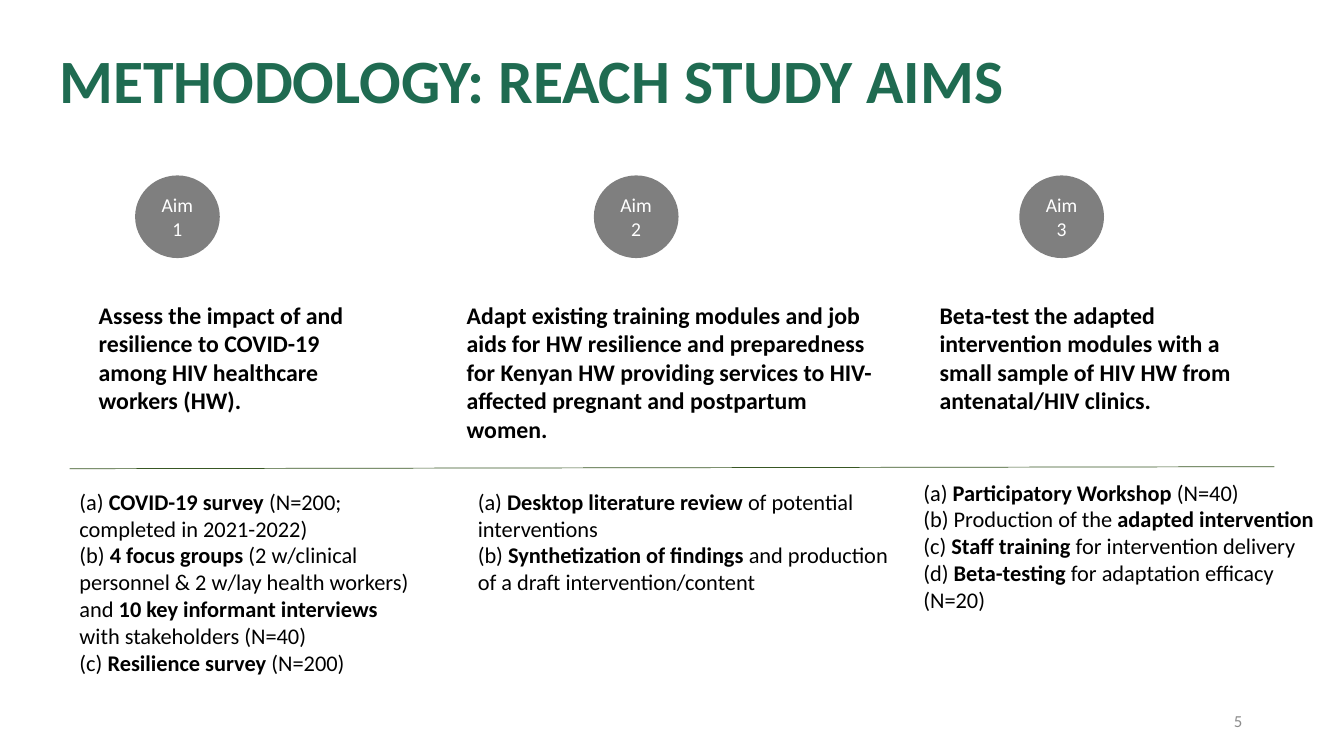
from dataclasses import dataclass

from lxml import etree
from pptx import Presentation
from pptx.dml.color import RGBColor
from pptx.enum.shapes import MSO_CONNECTOR, MSO_SHAPE
from pptx.enum.text import MSO_ANCHOR, PP_ALIGN
from pptx.oxml.ns import qn
from pptx.util import Inches, Pt

OVAL = MSO_SHAPE.OVAL
STRAIGHT = MSO_CONNECTOR.STRAIGHT
TOP, MIDDLE = MSO_ANCHOR.TOP, MSO_ANCHOR.MIDDLE
LEFT, CENTER, RIGHT = PP_ALIGN.LEFT, PP_ALIGN.CENTER, PP_ALIGN.RIGHT


@dataclass(frozen=True)
class Theme:
    font: str = "Calibri"
    green: str = "1F6B51"
    rule: str = "385723"
    ink: str = "000000"
    paper: str = "FFFFFF"
    grey: str = "8C8C8C"
    title: int = 44
    goal: int = 17
    body: int = 16
    badge: int = 14
    page: int = 12


THEME = Theme()

AIMS = [
    {
        "badge": 1.34,
        "goal": (0.88, 2.93, 2.89, 1.25),
        "text": "Assess the impact of and resilience to COVID-19 among HIV "
                "healthcare workers (HW).",
        "steps": (0.69, 4.79, 3.53, 2.26),
        "items": [
            ("(a) ", "COVID-19 survey ", "(N=200; completed in 2021-2022)"),
            ("(b) ", "4 focus groups ",
             "(2 w/clinical personnel & 2 w/lay health workers) and ",
             "10 key informant interviews ", "with stakeholders (N=40)"),
            ("(c) ", "Resilience survey ", "(N=200)"),
        ],
    },
    {
        "badge": 5.89,
        "goal": (4.53, 2.93, 4.28, 1.53),
        "text": "Adapt existing training modules and job aids for HW resilience "
                "and preparedness for Kenyan HW providing services to "
                "HIV-affected pregnant and postpartum women.",
        "steps": (4.64, 4.79, 4.41, 1.18),
        "items": [
            ("(a) ", "Desktop literature review ", "of potential interventions"),
            ("(b) ", "Synthetization of findings ",
             "and production of a draft intervention/content"),
        ],
    },
    {
        "badge": 10.11,
        "goal": (9.22, 2.93, 3.45, 1.24),
        "text": "Beta-test the adapted intervention modules with a small sample "
                "of HIV HW from antenatal/HIV clinics.",
        "steps": (9.06, 4.7, 4.13, 1.72),
        "items": [
            ("(a) ", "Participatory Workshop ", "(N=40)"),
            ("(b) Production of the ", "adapted intervention"),
            ("(c) ", "Staff training ", "for intervention delivery"),
            ("(d) ", "Beta-testing", " for adaptation efficacy (N=20)"),
        ],
    },
]


def add_run(para, text, size, color, bold=False):
    run = para.add_run()
    run.text = text
    run.font.name = THEME.font
    run.font.size = Pt(size)
    run.font.bold = bold
    run.font.color.rgb = RGBColor.from_string(color)


def add_text(slide, box, anchor=TOP):
    frame = slide.shapes.add_textbox(*map(Inches, box)).text_frame
    frame.word_wrap = True
    frame.vertical_anchor = anchor
    return frame


def add_title(slide, box, text):
    para = add_text(slide, box, MIDDLE).paragraphs[0]
    para.line_spacing = 0.9
    add_run(para, text, THEME.title, THEME.green, True)


def add_page(slide, box, text):
    para = add_text(slide, box, MIDDLE).paragraphs[0]
    para.alignment = RIGHT
    add_run(para, text, THEME.page, THEME.grey)


def add_badge(slide, box, text):
    oval = slide.shapes.add_shape(OVAL, *map(Inches, box))
    oval.shadow.inherit = False
    oval.fill.solid()
    oval.fill.fore_color.rgb = RGBColor.from_string(THEME.ink)
    color = oval.fill._xPr.find(qn("a:solidFill"))[0]
    etree.SubElement(color, qn("a:alpha")).set("val", "50000")
    oval.line.fill.background()
    frame = oval.text_frame
    frame.word_wrap = True
    frame.vertical_anchor = MIDDLE
    para = frame.paragraphs[0]
    para.alignment = CENTER
    add_run(para, text, THEME.badge, THEME.paper)


def add_goal(slide, box, text):
    para = add_text(slide, box).paragraphs[0]
    para.alignment = LEFT
    add_run(para, text, THEME.goal, THEME.ink, True)


def add_steps(slide, box, items):
    frame = add_text(slide, box)
    for row, parts in enumerate(items):
        para = frame.add_paragraph() if row else frame.paragraphs[0]
        for place, part in enumerate(parts):
            add_run(para, part, THEME.body, THEME.ink, place % 2 == 1)


def add_rule(slide, start, end):
    line = slide.shapes.add_connector(STRAIGHT, *map(Inches, start + end))
    line.line.color.rgb = RGBColor.from_string(THEME.rule)
    line.line.width = Pt(0.5)
    etree.SubElement(line._element.spPr, qn("a:effectLst"))


def add_aim(slide, number, aim):
    add_badge(slide, (aim["badge"], 1.74, 0.84, 0.82), f"Aim {number}")
    add_goal(slide, aim["goal"], aim["text"])
    add_steps(slide, aim["steps"], aim["items"])


def main():
    deck = Presentation()
    deck.slide_width, deck.slide_height = Inches(13.33), Inches(7.5)
    slide = deck.slides.add_slide(deck.slide_layouts[6])
    add_title(slide, (0.49, 0.41, 11.43, 0.84), "METHODOLOGY: REACH STUDY AIMS")
    add_rule(slide, (0.69, 4.65), (12.64, 4.63))
    for number, aim in enumerate(AIMS, 1):
        add_aim(slide, number, aim)
    add_page(slide, (9.42, 6.95, 3, 0.4), "5")
    deck.save("out.pptx")


if __name__ == "__main__":
    main()
